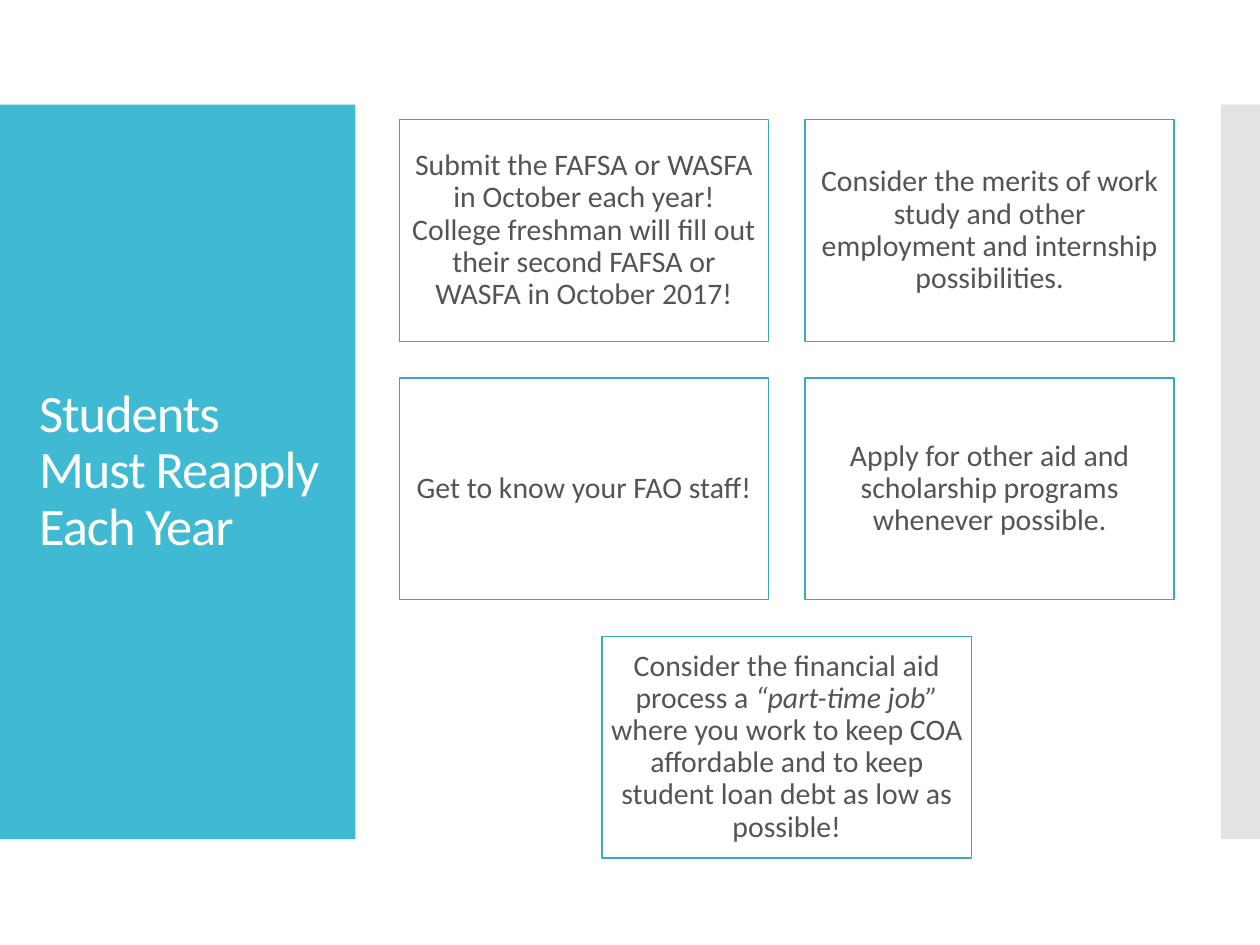
"""Builds the slide on reapplying for student aid each year."""
import pptx
import pptx.util
import pptx.dml.color
import pptx.enum.shapes
import pptx.enum.text
import pptx.oxml
import pptx.oxml.ns

Inches = pptx.util.Inches
Pt = pptx.util.Pt
ALIGN = pptx.enum.text.PP_ALIGN

TITLE = "Students Must Reapply Each Year"
CARDS = [
    [("Submit the FAFSA or WASFA in October each year! College freshman "
      "will fill out their second FAFSA or WASFA in October 2017!", False)],
    [("Consider the merits of work study and other employment and "
      "internship possibilities.", False)],
    [("Get to know your FAO staff!", False)],
    [("Apply for other aid and scholarship programs whenever possible.", False)],
    [("Consider the financial aid process a ", False),
     ("“part-time job” ", True),
     ("where you work to keep COA affordable and to keep student loan debt "
      "as low as possible!", False)],
]
THEME = {
    "font": "Calibri", "head": 30, "body": 17, "rule": 0.85,
    "panel": "40BAD2", "strip": "C8C8C8", "edge": "3AA9BF",
    "card": "FFFFFF", "light": "FFFFFF", "ink": "545454",
}
PANEL = (0, 0.83, 2.82, 5.83)
STRIP = (9.69, 0.83, 0.31, 5.83)
HEAD = (0.21, 1.23, 2.42, 5.03)
LEFT, TOP, WIDTH, HIGH, GAP = 3.17, 0.95, 2.93, 1.76, 0.29
COLS = 2


def color(name):
    return pptx.dml.color.RGBColor.from_string(THEME[name])


def add_box(slide, place, fill):
    box = slide.shapes.add_shape(
        pptx.enum.shapes.MSO_SHAPE.RECTANGLE, *map(Inches, place))
    box.shadow.inherit = False
    box.fill.solid()
    box.fill.fore_color.rgb = color(fill)
    box.line.fill.background()
    return box


def write(shape, runs, size, ink, align):
    frame = shape.text_frame
    frame.word_wrap = True
    frame.auto_size = pptx.enum.text.MSO_AUTO_SIZE.NONE
    frame.vertical_anchor = pptx.enum.text.MSO_ANCHOR.MIDDLE
    para = frame.paragraphs[0]
    para.alignment = align
    para.line_spacing = 0.9
    for text, slant in runs:
        run = para.add_run()
        run.text = text
        run.font.name = THEME["font"]
        run.font.size = Pt(THEME[size])
        run.font.color.rgb = color(ink)
        run.font.italic = slant
    return frame


def add_frame(slide):
    panel = add_box(slide, PANEL, "panel")
    strip = add_box(slide, STRIP, "strip")
    tint = strip.fill._xPr.find(".//" + pptx.oxml.ns.qn("a:srgbClr"))
    alpha = pptx.oxml.parse_xml(
        "<a:alpha %s val='50000'/>" % pptx.oxml.ns.nsdecls("a"))
    tint.append(alpha)
    title = slide.shapes.title
    title.left, title.top, title.width, title.height = map(Inches, HEAD)
    frame = write(title, [(TITLE, False)], "head", "light", ALIGN.LEFT)
    frame.paragraphs[0].runs[0].font._element.set("spc", "-60")
    for box in (panel, strip):
        title._element.addprevious(box._element)


def add_cards(slide):
    for start in range(0, len(CARDS), COLS):
        row = CARDS[start:start + COLS]
        shift = (COLS - len(row)) * (WIDTH + GAP) / 2
        top = TOP + start // COLS * (HIGH + GAP)
        for col, runs in enumerate(row):
            left = LEFT + shift + col * (WIDTH + GAP)
            card = add_box(slide, (left, top, WIDTH, HIGH), "card")
            card.line.color.rgb = color("edge")
            card.line.width = Pt(THEME["rule"])
            frame = write(card, runs, "body", "ink", ALIGN.CENTER)
            frame.margin_left = frame.margin_right = Inches(0.07)
            frame.margin_top = frame.margin_bottom = Inches(0.07)


def main():
    deck = pptx.Presentation()
    deck.slide_width, deck.slide_height = Inches(10), Inches(7.5)
    slide = deck.slides.add_slide(deck.slide_layouts[5])
    add_frame(slide)
    add_cards(slide)
    deck.save("out.pptx")


if __name__ == "__main__":
    main()
